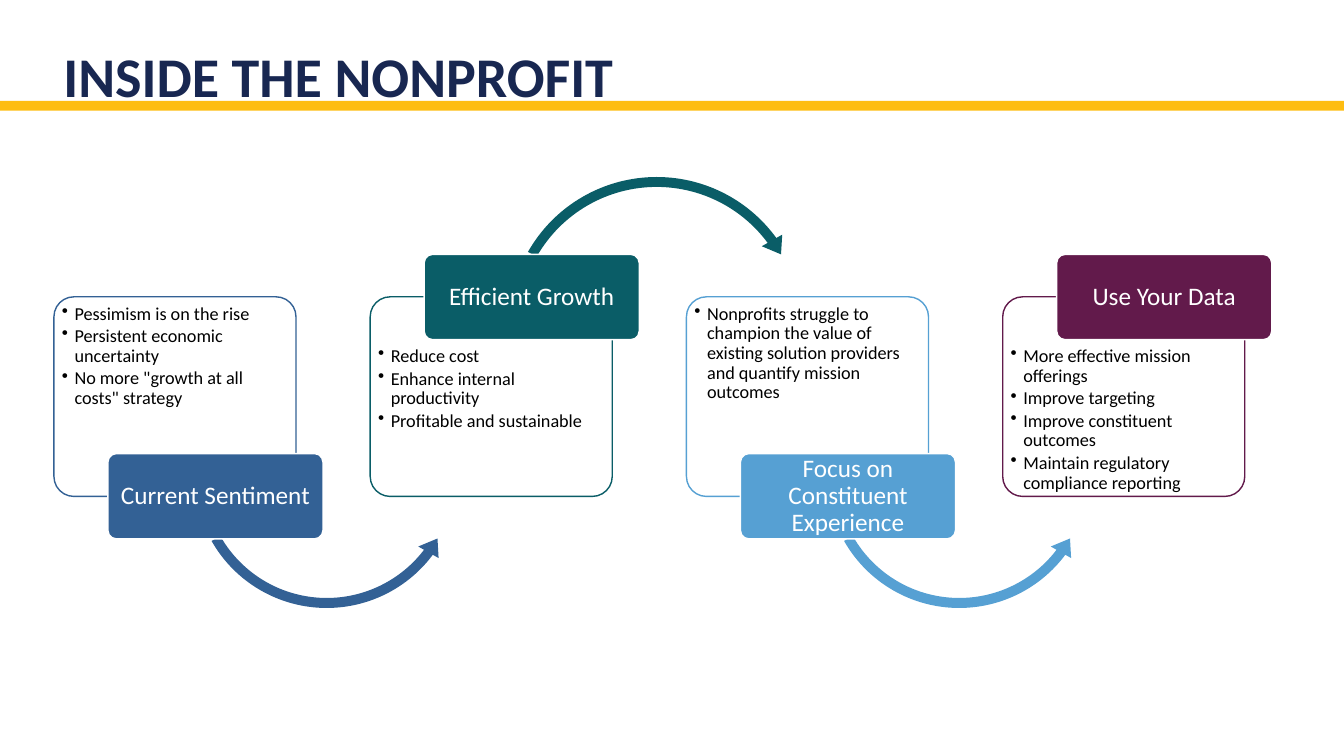
"""Build the "Inside the Nonprofit" slide: four linked stages with curved arrows."""
from dataclasses import dataclass

from lxml.etree import SubElement
from pptx import Presentation
from pptx.dml.color import RGBColor
from pptx.enum.shapes import MSO_SHAPE
from pptx.enum.text import MSO_ANCHOR, PP_ALIGN
from pptx.oxml.ns import qn
from pptx.util import Cm, Pt


@dataclass(frozen=True)
class Theme:
    font: str = "Calibri"
    title: str = "182751"
    rule: str = "FEBD11"
    white: str = "FFFFFF"
    black: str = "000000"
    blue: str = "336195"
    teal: str = "0A5D67"
    sky: str = "56A0D3"
    plum: str = "621A4B"
    title_size: int = 40
    label_size: int = 18
    body_size: int = 13


theme = Theme()


def add_figure(kind, left, top, width, height, fill, line=None, adjustments=()):
    figure = page.shapes.add_shape(kind, Cm(left), Cm(top), Cm(width), Cm(height))
    figure.shadow.inherit = False
    figure.fill.solid()
    figure.fill.fore_color.rgb = RGBColor.from_string(fill)
    if line:
        figure.line.color.rgb = RGBColor.from_string(line)
        figure.line.width = Pt(1)
    else:
        figure.line.fill.background()
    for index, value in enumerate(adjustments):
        figure.adjustments[index] = value
    return figure


def write_text(box, lines, size, color, anchor, insets, spacing, bold=False, align=PP_ALIGN.LEFT):
    frame = box.text_frame
    frame.word_wrap = True
    frame.vertical_anchor = anchor
    frame.margin_left = frame.margin_right = Cm(insets[0])
    frame.margin_top = frame.margin_bottom = Cm(insets[1])
    for index, line in enumerate(lines):
        para = frame.paragraphs[0] if index == 0 else frame.add_paragraph()
        para.alignment = align
        para.line_spacing = spacing
        span = para.add_run()
        span.text = line
        span.font.name = theme.font
        span.font.size = Pt(size)
        span.font.bold = bold
        span.font.color.rgb = RGBColor.from_string(color)
    return frame


deck = Presentation()
deck.slide_width, deck.slide_height = Cm(33.87), Cm(19.05)
page = deck.slides.add_slide(deck.slide_layouts[6])

add_figure(MSO_SHAPE.RECTANGLE, 0, 2.54, 33.87, 0.25, theme.rule)
title = page.shapes.add_textbox(Cm(1.6), Cm(0.18), Cm(30.68), Cm(2.74))
write_text(title, ["INSIDE THE NONPROFIT"], theme.title_size, theme.title,
           MSO_ANCHOR.BOTTOM, (0, 0.13), 0.95, bold=True)

stages = [
    ("Current Sentiment", theme.blue, [
        "Pessimism is on the rise",
        "Persistent economic uncertainty",
        'No more "growth at all costs" strategy',
    ]),
    ("Efficient Growth", theme.teal, [
        "Reduce cost",
        "Enhance internal productivity",
        "Profitable and sustainable",
    ]),
    ("Focus on Constituent Experience", theme.sky, [
        "Nonprofits struggle to champion the value of existing solution providers "
        "and quantify mission outcomes",
    ]),
    ("Use Your Data", theme.plum, [
        "More effective mission offerings",
        "Improve targeting",
        "Improve constituent outcomes",
        "Maintain regulatory compliance reporting",
    ]),
]
first_left, stage_step = 1.36, 7.97

for number, (name, color, points) in enumerate(stages):
    left = first_left + number * stage_step
    label_on_top = number % 2 == 1

    panel = add_figure(MSO_SHAPE.ROUNDED_RECTANGLE, left, 7.48, 6.1, 5.03,
                       theme.white, color, [0.1])
    white = panel.fill._xPr.find(qn("a:solidFill"))[0]
    SubElement(white, qn("a:alpha"), val="90000")

    body_top = 8.66 if label_on_top else 7.59
    body = page.shapes.add_textbox(Cm(left + 0.12), Cm(body_top), Cm(5.87), Cm(3.71))
    frame = write_text(body, points, theme.body_size, theme.black,
                       MSO_ANCHOR.TOP, (0.08, 0.08), 0.9)
    for para in frame.paragraphs:
        para.space_after = Pt(2)
        properties = para._p.get_or_add_pPr()
        properties.set("marL", str(Cm(0.32)))
        properties.set("indent", str(-Cm(0.32)))
        SubElement(properties, qn("a:buChar"), char="•")

    if number < len(stages) - 1:
        if label_on_top:
            add_figure(MSO_SHAPE.CIRCULAR_ARROW, left + 3.32, 4.29, 7.8, 7.8, color,
                       adjustments=(0.032, 3.978, 194.267, 125.755, 0.038))
        else:
            add_figure(MSO_SHAPE.LEFT_CIRCULAR_ARROW, left + 3.37, 8.48, 7.01, 7.01, color,
                       adjustments=(0.036, 4.457, 22.212, 90.245, 0.042))

    label = add_figure(MSO_SHAPE.ROUNDED_RECTANGLE, left + 1.36,
                       6.41 if label_on_top else 11.43, 5.42, 2.15,
                       color, theme.white, [0.1])
    write_text(label, [name], theme.label_size, theme.white,
               MSO_ANCHOR.MIDDLE, (0.1, 0.06), 0.9, align=PP_ALIGN.CENTER)

deck.save("out.pptx")
